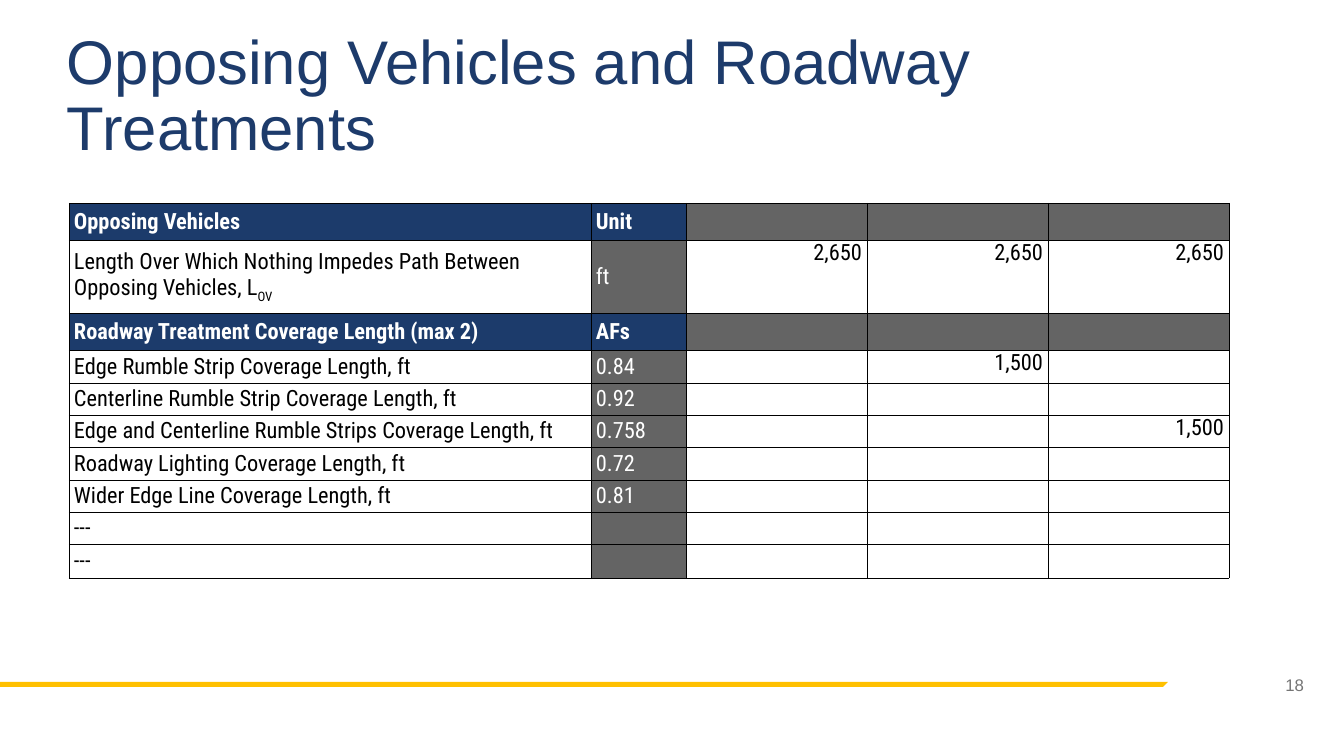
"""Build the slide on opposing vehicles and roadway treatments."""
from dataclasses import dataclass

from lxml import etree
from pptx import Presentation, util as u
from pptx.dml.color import RGBColor
from pptx.enum import text as t
from pptx.oxml import ns

TITLE = "Opposing Vehicles and Roadway Treatments"
PAGE_NUMBER = "18"
HEADERS = (0, 2)
SUBSCRIPTS = {(1, 0): "OV"}
ROWS = [
    ("Opposing Vehicles", "Unit", "", "", ""),
    ("Length Over Which Nothing Impedes Path Between Opposing Vehicles, L",
     "ft", "2,650", "2,650", "2,650"),
    ("Roadway Treatment Coverage Length (max 2)", "AFs", "", "", ""),
    ("Edge Rumble Strip Coverage Length, ft", "0.84", "", "1,500", ""),
    ("Centerline Rumble Strip Coverage Length, ft", "0.92", "", "", ""),
    ("Edge and Centerline Rumble Strips Coverage Length, ft", "0.758", "", "", "1,500"),
    ("Roadway Lighting Coverage Length, ft", "0.72", "", "", ""),
    ("Wider Edge Line Coverage Length, ft", "0.81", "", "", ""),
    ("---", "", "", "", ""),
    ("---", "", "", "", ""),
]
COLUMN_WIDTHS = (522, 95, 181, 181, 181)
ROW_HEIGHTS = (37, 73, 37, 33, 32, 32, 33, 32, 32, 34)
TABLE_LEFT, TABLE_TOP = 69, 203
STRIPE = [(-1, 687), (0, 682), (1168, 682), (1163, 687)]
SCALE = 914400 / 100.8


@dataclass(frozen=True)
class Theme:
    """Colours, fonts and type sizes."""
    title: str = "1D3B6B"
    header: str = "1C3B6B"
    gray: str = "646464"
    number: str = "757575"
    stripe: str = "FFC000"
    white: str = "FFFFFF"
    black: str = "000000"
    sans: str = "Arial"
    condensed: str = "Roboto Condensed"
    title_size: int = 44
    table_size: int = 16
    number_size: int = 12
    border: float = 0.25


THEME = Theme()


def px(length):
    """Turn px into EMU."""
    return u.Emu(round(length * SCALE))


def write(frame, text, *, font, size, color, bold=False, align=t.PP_ALIGN.LEFT,
          spacing=None, subscript=""):
    """Write one formatted paragraph with an optional subscript."""
    frame.word_wrap = True
    paragraph = frame.paragraphs[0]
    paragraph.alignment = align
    if spacing:
        paragraph.line_spacing = spacing
    for part in filter(None, (text, subscript)):
        run = paragraph.add_run()
        run.text = part
        run.font.name, run.font.size, run.font.bold = font, u.Pt(size), bold
        run.font.color.rgb = RGBColor.from_string(color)
    if subscript:
        run.font._element.set("baseline", "-25000")


def add_text(slide, box, text, **style):
    """Add a vertically centred text box."""
    frame = slide.shapes.add_textbox(*map(px, box)).text_frame
    frame.vertical_anchor = t.MSO_ANCHOR.MIDDLE
    write(frame, text, **style)


def outline(cell):
    """Draw thin borders on all sides of a cell."""
    properties = cell._tc.get_or_add_tcPr()
    for index, side in enumerate(("lnL", "lnR", "lnT", "lnB")):
        line = etree.Element(ns.qn(f"a:{side}"), w=str(u.Pt(THEME.border)))
        fill = etree.SubElement(line, ns.qn("a:solidFill"))
        etree.SubElement(fill, ns.qn("a:srgbClr"), val=THEME.black)
        properties.insert(index, line)


def add_stripe(slide):
    """Draw the footer stripe."""
    builder = slide.shapes.build_freeform(*STRIPE[0], scale=SCALE)
    builder.add_line_segments(STRIPE[1:], close=True)
    shape = builder.convert_to_shape()
    shape.shadow.inherit = False
    shape.fill.solid()
    shape.fill.fore_color.rgb = RGBColor.from_string(THEME.stripe)
    shape.line.fill.background()


def format_cell(cell, row, column, text):
    """Fill one table cell according to its row and column."""
    header = row in HEADERS
    label = column < 2
    if header and label:
        fill = THEME.header
    else:
        fill = THEME.gray if header or column == 1 else THEME.white
    cell.fill.solid()
    cell.fill.fore_color.rgb = RGBColor.from_string(fill)
    cell.margin_left = cell.margin_right = px(5)
    cell.margin_top = cell.margin_bottom = 0
    cell.vertical_anchor = t.MSO_ANCHOR.MIDDLE if label else t.MSO_ANCHOR.TOP
    outline(cell)
    write(cell.text_frame, text, font=THEME.condensed, size=THEME.table_size,
          color=THEME.black if fill == THEME.white else THEME.white, bold=header,
          align=t.PP_ALIGN.LEFT if label else t.PP_ALIGN.RIGHT,
          subscript=SUBSCRIPTS.get((row, column), ""))


def add_treatment_table(slide):
    """Add the table of vehicles and treatments."""
    box = (TABLE_LEFT, TABLE_TOP, sum(COLUMN_WIDTHS), sum(ROW_HEIGHTS))
    table = slide.shapes.add_table(len(ROWS), len(COLUMN_WIDTHS), *map(px, box)).table
    table.first_row = table.horz_banding = False
    for column, width in zip(table.columns, COLUMN_WIDTHS):
        column.width = px(width)
    for row, height in zip(table.rows, ROW_HEIGHTS):
        row.height = px(height)
    for row, values in enumerate(ROWS):
        for column, text in enumerate(values):
            format_cell(table.cell(row, column), row, column, text)


def main():
    """Build and save the presentation."""
    presentation = Presentation()
    presentation.slide_width, presentation.slide_height = px(1344), px(756)
    slide = presentation.slides.add_slide(presentation.slide_layouts[6])
    add_stripe(slide)
    add_text(slide, (57, 41, 1159, 113), TITLE, font=THEME.sans,
             size=THEME.title_size, color=THEME.title, spacing=0.9)
    add_text(slide, (1229, 672, 85, 26), PAGE_NUMBER, font=THEME.sans,
             size=THEME.number_size, color=THEME.number, align=t.PP_ALIGN.RIGHT)
    add_treatment_table(slide)
    presentation.save("out.pptx")


if __name__ == "__main__":
    main()
